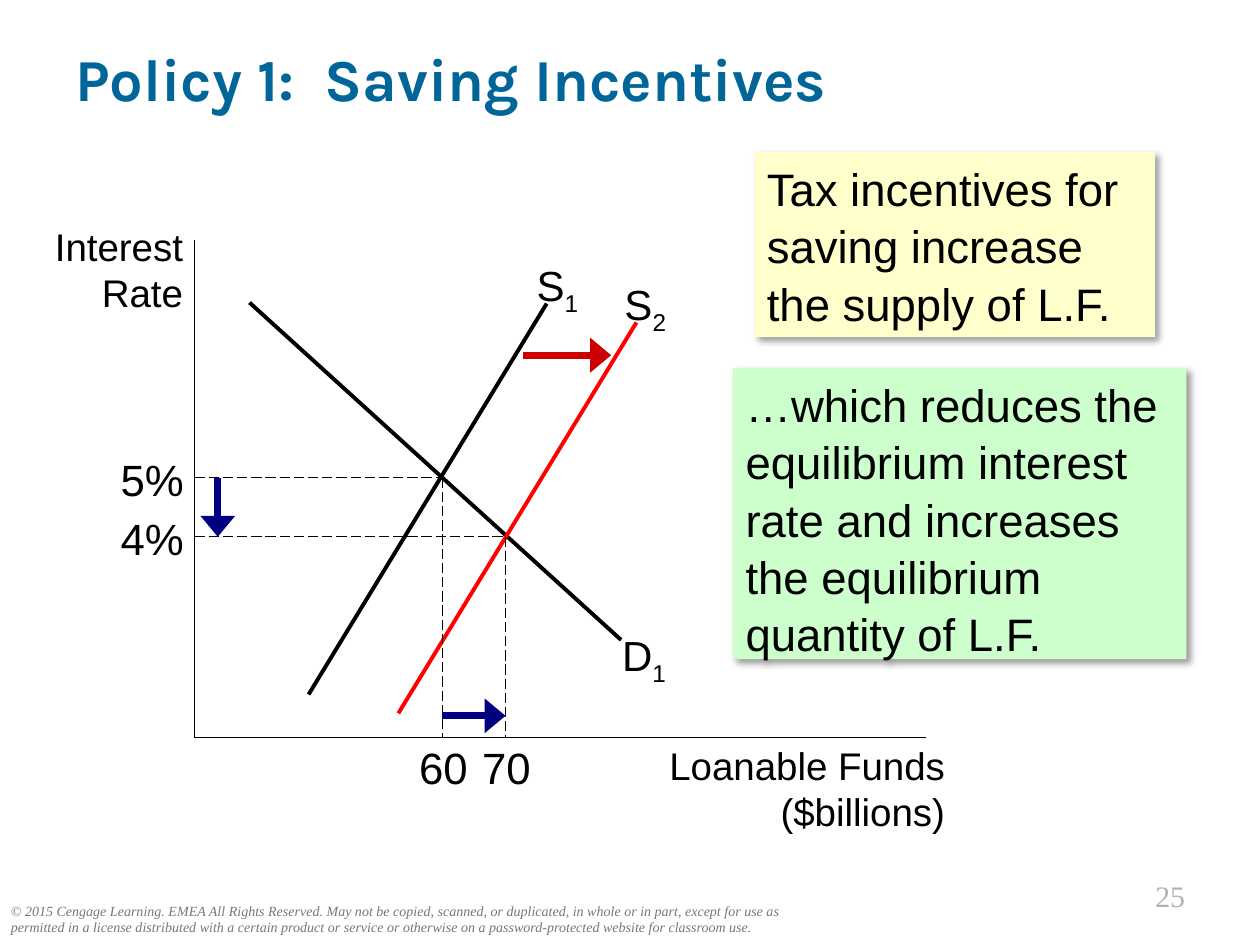
"""Build a slide showing how saving incentives shift the loanable funds market."""
from lxml.etree import SubElement
from pptx import Presentation
from pptx.dml.color import RGBColor
from pptx.enum.dml import MSO_LINE
from pptx.enum.shapes import MSO_CONNECTOR, MSO_SHAPE
from pptx.enum.text import MSO_ANCHOR, PP_ALIGN
from pptx.oxml.ns import qn
from pptx.util import Cm, Pt

BLACK = RGBColor(0x00, 0x00, 0x00)
RED = RGBColor(0xFF, 0x00, 0x00)
DARK_RED = RGBColor(0xCC, 0x00, 0x00)
NAVY = RGBColor(0x00, 0x00, 0x80)
TEAL = RGBColor(0x00, 0x66, 0x99)
GRAY = RGBColor(0x77, 0x77, 0x77)
SILVER = RGBColor(0xB2, 0xB2, 0xB2)
YELLOW = RGBColor(0xFF, 0xFF, 0xCC)
GREEN = RGBColor(0xCC, 0xFF, 0xCC)

TITLE = "Policy 1:  Saving Incentives"
COPYRIGHT = (
    "© 2015 Cengage Learning. EMEA All Rights Reserved. May not be copied, scanned, "
    "or duplicated, in whole or in part, except for use as permitted in a license "
    "distributed with a certain product or service or otherwise on a "
    "password-protected website for classroom use."
)
PAGE_NUMBER = "25"

AXIS_X, AXIS_Y = 3.92, 14.87
AXIS_TOP, AXIS_RIGHT = 4.83, 18.67
AXIS_LABELS = [
    ("Interest\vRate", (0.1, 4.37, 3.84, 2.11)),
    ("Loanable Funds ($billions)", (12.65, 14.83, 6.65, 2.11)),
]
CURVES = [
    ("D", "1", (5.03, 6.1), (12.52, 12.9), BLACK, (12.29, 12.57)),
    ("S", "1", (6.22, 14), (11.02, 6.12), BLACK, (10.57, 5.11)),
    ("S", "2", (8.03, 14.38), (12.83, 6.5), RED, (12.34, 5.49)),
]
EQUILIBRIA = [
    ("5%", "60", (8.92, 9.63)),
    ("4%", "70", (10.19, 10.82)),
]
ARROWS = [
    ((10.54, 7.16), (12.32, 7.16), DARK_RED),
    ((4.39, 9.63), (4.39, 10.82), NAVY),
    ((8.92, 14.43), (10.19, 14.43), NAVY),
]
NOTES = [
    ("Tax incentives for saving increase the supply of L.F.",
     (15.21, 3.07, 8.08, 3.73), YELLOW),
    ("…which reduces the equilibrium interest rate and increases the equilibrium "
     "quantity of L.F.", (14.78, 7.42, 9.14, 5.87), GREEN),
]


def write(shape, text, size, color=BLACK, font="Arial", align=PP_ALIGN.LEFT,
          subscript=""):
    frame = shape.text_frame
    frame.word_wrap = True
    frame.vertical_anchor = MSO_ANCHOR.TOP
    paragraph = frame.paragraphs[0]
    paragraph.text = text
    paragraph.alignment = align
    paragraph.font.size = Pt(size)
    paragraph.font.name = font
    paragraph.font.color.rgb = color
    if subscript:
        run = paragraph.add_run()
        run.text = subscript
        run.font._element.set("baseline", "-25000")
    return paragraph


def add_text(slide, box, text, size, **style):
    shape = slide.shapes.add_textbox(*map(Cm, box))
    return shape, write(shape, text, size, **style)


def add_line(slide, start, end, width, color=BLACK, dashed=False, arrow=False):
    connector = slide.shapes.add_connector(
        MSO_CONNECTOR.STRAIGHT, *map(Cm, (*start, *end)))
    connector.line.width = Pt(width)
    connector.line.color.rgb = color
    if dashed:
        connector.line.dash_style = MSO_LINE.LONG_DASH
    if arrow:
        SubElement(connector.line._get_or_add_ln(), qn("a:tailEnd"),
                   type="triangle", w="lg", len="med")
    SubElement(connector._element.spPr, qn("a:effectLst"))


def add_note(slide, text, box, fill):
    shape = slide.shapes.add_shape(MSO_SHAPE.RECTANGLE, *map(Cm, box))
    shape.fill.solid()
    shape.fill.fore_color.rgb = fill
    shape.line.fill.background()
    shape.shadow.inherit = False
    effects = shape._element.spPr.find(qn("a:effectLst"))
    shadow = SubElement(effects, qn("a:outerShdw"), blurRad=str(Pt(4)),
                        dist=str(Pt(3)), dir="2700000", algn="tl", rotWithShape="0")
    shade = SubElement(shadow, qn("a:srgbClr"), val=str(BLACK))
    SubElement(shade, qn("a:alpha"), val="40000")
    write(shape, text, 26).line_spacing = 1.05


def add_value(slide, text, left, top):
    shape, _ = add_text(slide, (left, top, 1.7, 1.32), text, 25,
                        align=PP_ALIGN.CENTER)
    shape.text_frame.margin_left = shape.text_frame.margin_right = 0


def add_graph(slide):
    origin = (AXIS_X, AXIS_Y)
    for end in ((AXIS_X, AXIS_TOP), (AXIS_RIGHT, AXIS_Y)):
        add_line(slide, origin, end, 0.75)
    for text, box in AXIS_LABELS:
        add_text(slide, box, text, 22, align=PP_ALIGN.RIGHT)
    for letter, number, start, end, color, corner in CURVES:
        add_line(slide, start, end, 2.25, color)
        add_text(slide, (*corner, 1.55, 1.27), letter, 24, subscript=number)
    for rate, quantity, point in EQUILIBRIA:
        x, y = point
        add_line(slide, (AXIS_X, y), point, 0.75, dashed=True)
        add_line(slide, point, (x, AXIS_Y), 0.75, dashed=True)
        add_value(slide, rate, AXIS_X - 1.7, y - 0.62)
        add_value(slide, quantity, x - 0.83, AXIS_Y - 0.07)
    for start, end, color in ARROWS:
        add_line(slide, start, end, 4, color, arrow=True)


def main():
    presentation = Presentation()
    presentation.slide_width, presentation.slide_height = Cm(25.4), Cm(19.05)
    slide = presentation.slides.add_slide(presentation.slide_layouts[6])
    _, paragraph = add_text(slide, (-0.03, 18.06, 16.33, 0.94), COPYRIGHT, 8,
                            color=GRAY, font="Times New Roman")
    paragraph.font.italic = True
    add_text(slide, (20.96, 17.58, 3.18, 0.97), PAGE_NUMBER, 17, color=SILVER,
             font="Times New Roman", align=PP_ALIGN.RIGHT)
    shape, paragraph = add_text(slide, (1.27, 0.61, 22.86, 1.93), TITLE, 34,
                                color=TEAL, font="Karla")
    shape.text_frame.vertical_anchor = MSO_ANCHOR.MIDDLE
    paragraph.font.bold = True
    add_graph(slide)
    for note in NOTES:
        add_note(slide, *note)
    presentation.save("out.pptx")


if __name__ == "__main__":
    main()
